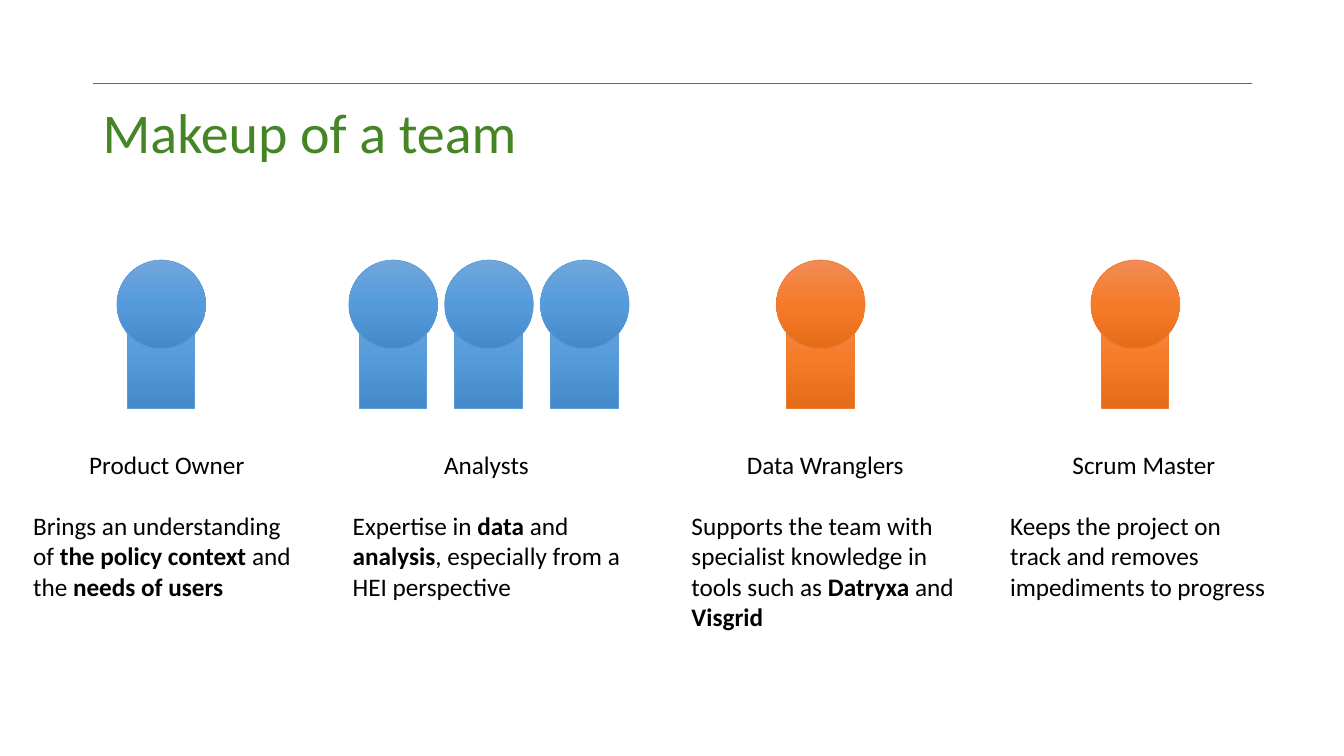
"""Build the team makeup slide with four roles and their figures."""
from copy import deepcopy
from lxml import etree
from pptx import Presentation
from pptx.dml.color import RGBColor
from pptx.enum.shapes import MSO_CONNECTOR as CONN, MSO_SHAPE as SHAPE
from pptx.enum.text import MSO_ANCHOR as ANCHOR, MSO_AUTO_SIZE as AUTO, PP_ALIGN as ALIGN
from pptx.oxml.ns import qn
from pptx.util import Inches, Pt

TITLE = "Makeup of a team"
GREEN, BLACK = "458525", "000000"
BLUE = {"stops": ["71A6DB", "559BDB", "448ACA"], "line": "5B9BD5"}
ORANGE = {"stops": ["F18C57", "F67B28", "E56C19"], "line": "ED7D31"}

ROLES = [
    {"name": "Product Owner", "left": 0.23, "height": 1.62, "look": BLUE, "heads": [1.16],
     "text": [("Brings an understanding of ", False), ("the policy context ", True),
              ("and the ", False), ("needs of users", True)]},
    {"name": "Analysts", "left": 3.4, "height": 1.62, "look": BLUE, "heads": [3.46, 4.41, 5.36],
     "text": [("Expertise in", False), (" data ", True), ("and ", False),
              ("analysis", True), (", especially from a HEI perspective", False)]},
    {"name": "Data Wranglers", "left": 6.76, "height": 1.92, "look": ORANGE, "heads": [7.7],
     "text": [("Supports the team with specialist knowledge in tools such as ", False),
              ("Datryxa", True), (" and ", False), ("Visgrid", True)]},
    {"name": "Scrum Master", "left": 9.92, "height": 1.62, "look": ORANGE, "heads": [10.82],
     "text": [("Keeps the project on track and removes impediments to progress", False)]},
]
TEXT_TOP, TEXT_WIDTH = 4.41, 2.85
HEAD_TOP, HEAD_SIZE = 2.58, 0.88
BODY_TOP, BODY_WIDTH, BODY_HEIGHT, BODY_INSET = 3.06, 0.67, 0.99, 0.1


def rgb(color):
    return RGBColor.from_string(color)


def add_run(p, text, color=BLACK, **fmt):
    r = p.add_run()
    r.text = text
    for key, value in {"name": "Calibri", "size": Pt(18), **fmt}.items():
        setattr(r.font, key, value)
    r.font.color.rgb = rgb(color)


def add_box(slide, left, top, width, height, **fmt):
    tf = slide.shapes.add_textbox(*map(Inches, (left, top, width, height))).text_frame
    for key, value in {"word_wrap": True, **fmt}.items():
        setattr(tf, key, value)
    return tf


def add_title(slide):
    line = slide.shapes.add_connector(CONN.STRAIGHT, *map(Inches, (0.92, 0.83, 12.42, 0.83)))
    line.line.color.rgb = rgb(GREEN)
    line.line.width = Pt(0.5)
    etree.SubElement(line._element.spPr, qn("a:effectLst"))
    tf = add_box(slide, 0.92, 0.83, 11.5, 1.02,
                 vertical_anchor=ANCHOR.MIDDLE, auto_size=AUTO.NONE)
    p = tf.paragraphs[0]
    p.line_spacing = 0.9
    add_run(p, TITLE, GREEN, size=Pt(40))


def add_part(group, kind, left, top, width, height, look):
    sp = group.shapes.add_shape(kind, *map(Inches, (left, top, width, height)))
    sp.shadow.inherit = False
    sp.fill.gradient()
    sp.fill.gradient_angle = 270
    stop_list = sp._element.spPr.find(".//" + qn("a:gsLst"))
    stop_list.append(deepcopy(stop_list[1]))
    for i, (stop, color) in enumerate(zip(sp.fill.gradient_stops, look["stops"])):
        stop.position = i / 2
        stop.color.rgb = rgb(color)
    sp.line.color.rgb = rgb(look["line"])
    sp.line.width = Pt(0.5)


def add_person(slide, left, look):
    group = slide.shapes.add_group_shape()
    add_part(group, SHAPE.RECTANGLE, left + BODY_INSET, BODY_TOP, BODY_WIDTH, BODY_HEIGHT, look)
    add_part(group, SHAPE.OVAL, left, HEAD_TOP, HEAD_SIZE, HEAD_SIZE, look)


def add_role(slide, role):
    tf = add_box(slide, role["left"], TEXT_TOP, TEXT_WIDTH, role["height"],
                 auto_size=AUTO.SHAPE_TO_FIT_TEXT)
    p = tf.paragraphs[0]
    p.alignment = ALIGN.CENTER
    add_run(p, role["name"])
    p = tf.add_paragraph()
    p.space_before = Pt(22)
    for text, bold in role["text"]:
        add_run(p, text, bold=bold)
    for left in role["heads"]:
        add_person(slide, left, role["look"])


def main():
    prs = Presentation()
    prs.slide_width, prs.slide_height = Inches(13.33), Inches(7.5)
    slide = prs.slides.add_slide(prs.slide_layouts[6])
    add_title(slide)
    for role in ROLES:
        add_role(slide, role)
    prs.save("out.pptx")


if __name__ == "__main__":
    main()
